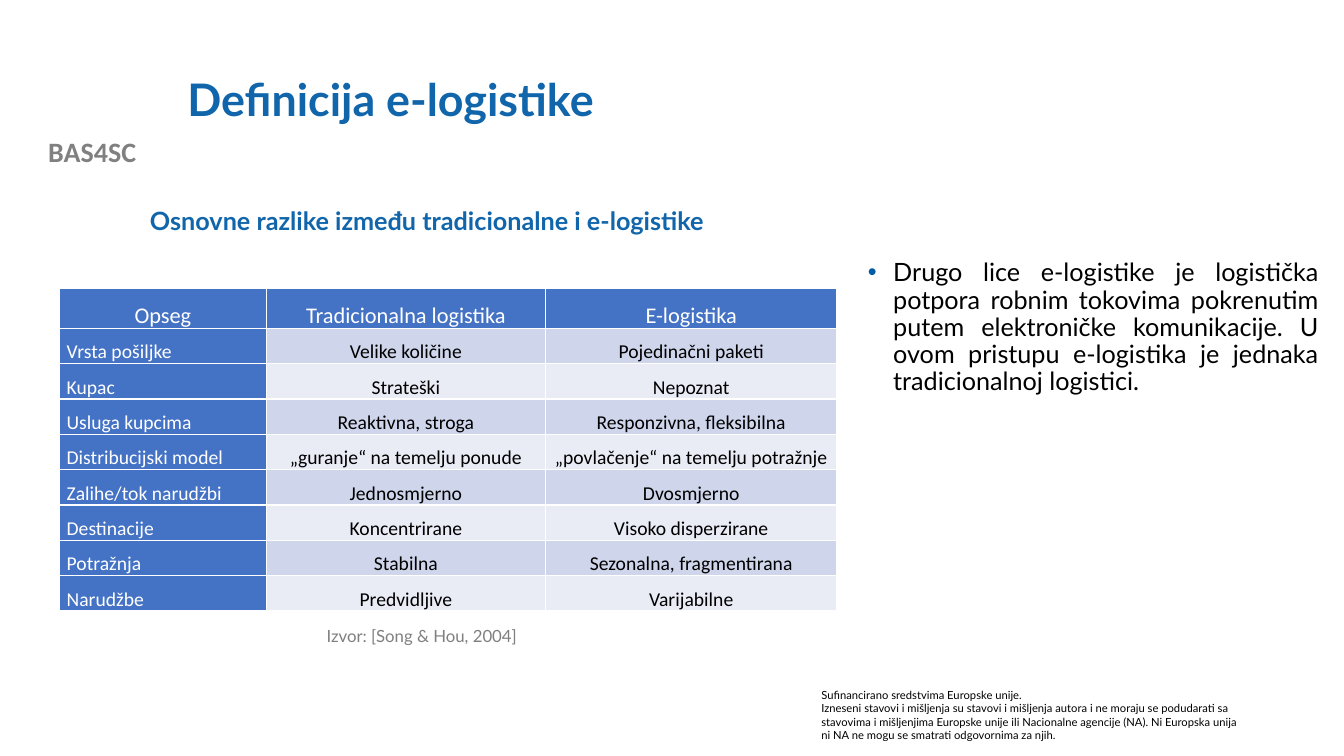
import pptx
import pptx.dml.color
import pptx.enum.text
import pptx.oxml
import pptx.oxml.ns
import pptx.util
from pptx.dml.color import RGBColor
from pptx.util import Cm

BLUE = RGBColor(0x10, 0x65, 0xAB)
GREY = RGBColor(0x80, 0x80, 0x80)
SOURCE_GREY = RGBColor(0x7F, 0x7F, 0x7F)
BLACK = RGBColor(0, 0, 0)
WHITE = RGBColor(0xFF, 0xFF, 0xFF)
HEAD_FILL = RGBColor(0x44, 0x72, 0xC4)
BAND_FILLS = (RGBColor(0xCF, 0xD5, 0xEA), RGBColor(0xE9, 0xEB, 0xF5))
BULLET_BLUE = "015BA6"

ALIGN = pptx.enum.text.PP_ALIGN
ANCHOR = pptx.enum.text.MSO_ANCHOR

COLUMN_WIDTHS = (Cm(5.21), Cm(7.04), Cm(7.34))
HEAD_HEIGHT, ROW_HEIGHT = Cm(1.01), Cm(0.89)
ROWS = (
    ("Opseg", "Tradicionalna logistika", "E-logistika"),
    ("Vrsta pošiljke", "Velike količine", "Pojedinačni paketi"),
    ("Kupac", "Strateški", "Nepoznat"),
    ("Usluga kupcima", "Reaktivna, stroga", "Responzivna, fleksibilna"),
    ("Distribucijski model", "„guranje“ na temelju ponude",
     "„povlačenje“ na temelju potražnje"),
    ("Zalihe/tok narudžbi", "Jednosmjerno", "Dvosmjerno"),
    ("Destinacije", "Koncentrirane", "Visoko disperzirane"),
    ("Potražnja", "Stabilna", "Sezonalna, fragmentirana"),
    ("Narudžbe", "Predvidljive", "Varijabilne"),
)
STATEMENT = (
    "Drugo lice e-logistike je logistička potpora robnim tokovima pokrenutim "
    "putem elektroničke komunikacije. U ovom pristupu e-logistika je jednaka "
    "tradicionalnoj logistici."
)
DISCLAIMER = (
    "Sufinancirano sredstvima Europske unije.\n"
    "Izneseni stavovi i mišljenja su stavovi i mišljenja autora i ne moraju se "
    "podudarati sa stavovima i mišljenjima Europske unije ili Nacionalne "
    "agencije (NA). Ni Europska unija ni NA ne mogu se smatrati odgovornima "
    "za njih."
)


def format_runs(p, size, color, font="Lato", bold=False):
    for r in p.runs:
        r.font.name = font
        r.font.size = pptx.util.Pt(size)
        r.font.bold = bold
        r.font.color.rgb = color


def add_text(s, box, text, size, color, font="Lato", bold=False,
             align=ALIGN.LEFT, spacing=1.0, anchor=ANCHOR.TOP):
    tf = s.shapes.add_textbox(*box).text_frame
    tf.word_wrap = True
    tf.vertical_anchor = anchor
    tf.text = text
    for p in tf.paragraphs:
        p.alignment = align
        p.line_spacing = spacing
        format_runs(p, size, color, font, bold)
    return tf


def add_bullet(p, indent):
    pPr = p._p.get_or_add_pPr()
    pPr.set("marL", str(indent))
    pPr.set("indent", str(-indent))
    ns = pptx.oxml.ns.nsdecls("a")
    for xml in (
        f'<a:buClr {ns}><a:srgbClr val="{BULLET_BLUE}"/></a:buClr>',
        f'<a:buFont {ns} typeface="Arial"/>',
        f'<a:buChar {ns} char="•"/>',
    ):
        pPr.append(pptx.oxml.parse_xml(xml))


def add_borders(cell):
    tcPr = cell._tc.get_or_add_tcPr()
    for side in "LRTB":
        tcPr.append(pptx.oxml.parse_xml(
            f'<a:ln{side} {pptx.oxml.ns.nsdecls("a")} w="{pptx.util.Pt(1)}">'
            f'<a:solidFill><a:srgbClr val="{WHITE}"/></a:solidFill></a:ln{side}>'))


def fill_cell(cell, text, row, col):
    is_head = row == 0
    is_label = is_head or col == 0
    add_borders(cell)
    cell.fill.solid()
    cell.fill.fore_color.rgb = HEAD_FILL if is_label else BAND_FILLS[(row - 1) % 2]
    cell.margin_left = cell.margin_right = Cm(0.18)
    cell.margin_top = cell.margin_bottom = 0
    cell.vertical_anchor = ANCHOR.MIDDLE if is_head else ANCHOR.TOP
    cell.text = text
    p = cell.text_frame.paragraphs[0]
    p.alignment = ALIGN.JUSTIFY if col == 0 and not is_head else ALIGN.CENTER
    p.line_spacing = 1.5
    p.space_after = pptx.util.Pt(6)
    format_runs(p, 16 if is_head else 14, WHITE if is_label else BLACK, "Calibri")


def add_heading(s, left, top):
    add_text(s, (left, top + Cm(2.24), Cm(4.65), Cm(1.12)), "BAS4SC", 20, GREY,
             "Calibri", bold=True, align=ALIGN.CENTER)
    add_text(s, (left + Cm(4.47), top, Cm(27.08), Cm(3.1)),
             "Definicija e-logistike", 32, BLUE, bold=True, spacing=0.9,
             anchor=ANCHOR.MIDDLE)


def add_comparison(s, left, top):
    """Place the caption, the table below it and the source line."""
    add_text(s, (left + Cm(2.03), top, Cm(19.69), Cm(1.02)),
             "Osnovne razlike između tradicionalne i e-logistike", 18, BLUE,
             bold=True)
    height = HEAD_HEIGHT + ROW_HEIGHT * (len(ROWS) - 1)
    table = s.shapes.add_table(len(ROWS), len(COLUMN_WIDTHS), left,
                               top + Cm(2.21), sum(COLUMN_WIDTHS), height).table
    for column, width in zip(table.columns, COLUMN_WIDTHS):
        column.width = width
    for i, texts in enumerate(ROWS):
        table.rows[i].height = ROW_HEIGHT if i else HEAD_HEIGHT
        for j, text in enumerate(texts):
            fill_cell(table.cell(i, j), text, i, j)
    add_text(s, (left + Cm(6.48), top + Cm(10.64), Cm(9.3), Cm(1.32)),
             "Izvor: [Song & Hou, 2004]", 12, SOURCE_GREY, spacing=0.9)


def add_statement(s, box):
    tf = add_text(s, box, STATEMENT, 18, BLACK, align=ALIGN.JUSTIFY, spacing=0.9)
    add_bullet(tf.paragraphs[0], Cm(0.64))


def add_disclaimer(s, box):
    add_text(s, box, DISCLAIMER, 8, BLACK)


def main():
    prs = pptx.Presentation()
    prs.slide_width, prs.slide_height = Cm(33.87), Cm(19.05)
    s = prs.slides.add_slide(prs.slide_layouts[6])
    add_heading(s, 0, Cm(1.02))
    add_comparison(s, Cm(1.5), Cm(5.05))
    add_statement(s, (Cm(21.62), Cm(6.43), Cm(11.86), Cm(3.71)))
    add_disclaimer(s, (Cm(20.45), Cm(17.22), Cm(11.1), Cm(1.63)))
    prs.save("out.pptx")


if __name__ == "__main__":
    main()
